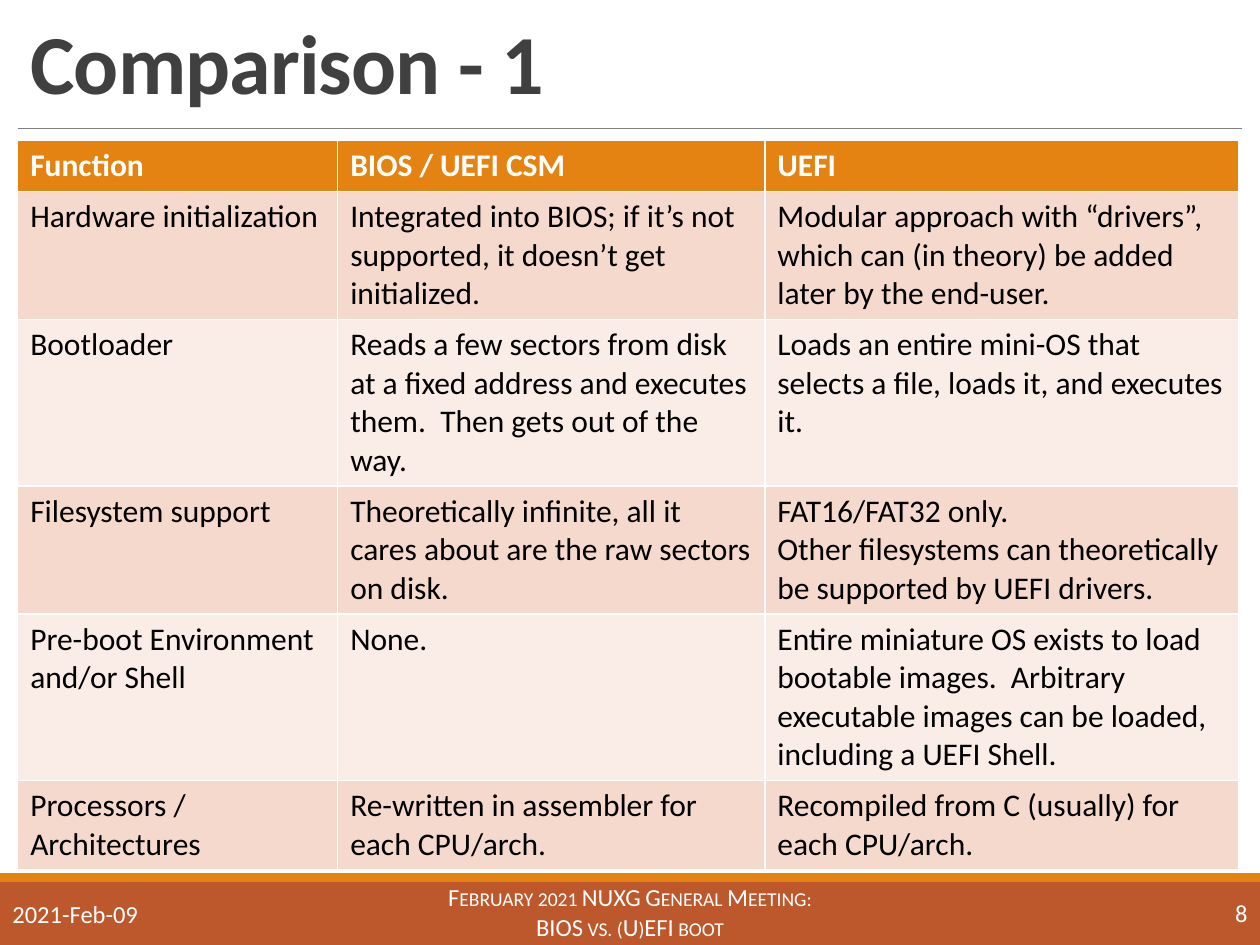
import pptx
import pptx.util
import pptx.dml.color
import pptx.enum.shapes
import pptx.enum.text
import lxml.etree
from pptx.util import Inches

ALIGN = pptx.enum.text.PP_ALIGN
ANCHOR = pptx.enum.text.MSO_ANCHOR


def color(hex_string):
    return pptx.dml.color.RGBColor.from_string(hex_string)


def format_text(paragraph, size, hex_string, bold=False, align=ALIGN.LEFT):
    paragraph.alignment = align
    paragraph.font.name = "Calibri"
    paragraph.font.size = pptx.util.Pt(size)
    paragraph.font.bold = bold
    paragraph.font.color.rgb = color(hex_string)


presentation = pptx.Presentation()
presentation.slide_width = Inches(10)
presentation.slide_height = Inches(7.5)
slide = presentation.slides.add_slide(presentation.slide_layouts[5])

# Footer bands
for top, height, fill in [(7, 0.5, "BD582C"), (6.93, 0.07, "E48312")]:
    band = slide.shapes.add_shape(
        pptx.enum.shapes.MSO_SHAPE.RECTANGLE,
        Inches(0), Inches(top), Inches(10), Inches(height))
    band.shadow.inherit = False
    band.fill.solid()
    band.fill.fore_color.rgb = color(fill)
    band.line.fill.background()

# Rule under the title
rule = slide.shapes.add_connector(
    pptx.enum.shapes.MSO_CONNECTOR.STRAIGHT,
    Inches(0.14), Inches(1.02), Inches(9.86), Inches(1.02))
rule.line.color.rgb = color("808080")
rule.line.width = pptx.util.Pt(0.5)
lxml.etree.SubElement(rule._element.spPr, pptx.oxml.ns.qn("a:effectLst"))

# Title
title = slide.shapes.title
title.left, title.top = Inches(0.14), Inches(0)
title.width, title.height = Inches(9.7), Inches(0.94)
title.text_frame.text = "Comparison - 1"
title.text_frame.auto_size = pptx.enum.text.MSO_AUTO_SIZE.NONE
title.text_frame.vertical_anchor = ANCHOR.BOTTOM
heading = title.text_frame.paragraphs[0]
heading.line_spacing = 0.85
format_text(heading, 48, "404040", bold=True)
heading.font._rPr.set("spc", "-50")

# Comparison table
rows = [
    ("Function", "BIOS / UEFI CSM", "UEFI"),
    ("Hardware initialization",
     "Integrated into BIOS; if it’s not supported, it doesn’t get initialized.",
     "Modular approach with “drivers”, which can (in theory) be added later by the end-user."),
    ("Bootloader",
     "Reads a few sectors from disk at a fixed address and executes them.  Then gets out of the way.",
     "Loads an entire mini-OS that selects a file, loads it, and executes it."),
    ("Filesystem support",
     "Theoretically infinite, all it cares about are the raw sectors on disk.",
     "FAT16/FAT32 only.\nOther filesystems can theoretically be supported by UEFI drivers."),
    ("Pre-boot Environment and/or Shell",
     "None.",
     "Entire miniature OS exists to load bootable images.  Arbitrary executable images "
     "can be loaded, including a UEFI Shell."),
    ("Processors / Architectures",
     "Re-written in assembler for each CPU/arch.",
     "Recompiled from C (usually) for each CPU/arch."),
]
table = slide.shapes.add_table(
    len(rows), 3, Inches(0.14), Inches(1.11), Inches(9.69), Inches(0.41 * len(rows))).table
for column, width in zip(table.columns, (2.54, 3.39, 3.76)):
    column.width = Inches(width)
for row_index, row in enumerate(rows):
    header = row_index == 0
    fill = "E48312" if header else ("FAEDE7", "F5D9CC")[row_index % 2]
    for column_index, text in enumerate(row):
        cell = table.cell(row_index, column_index)
        cell.text = text
        cell.fill.solid()
        cell.fill.fore_color.rgb = color(fill)
        for paragraph in cell.text_frame.paragraphs:
            format_text(paragraph, 18, "FFFFFF" if header else "000000", bold=header)

# Date, meeting name and slide number
footers = [
    ("2021-Feb-09", 0, 7.05, 2.03, 0.4, ALIGN.LEFT, "none"),
    ("February 2021 NUXG General Meeting:\vBIOS vs. (U)EFI boot",
     3.02, 7, 3.96, 0.47, ALIGN.CENTER, "small"),
    ("8", 8.92, 7.04, 1.08, 0.4, ALIGN.RIGHT, "none"),
]
for text, left, top, width, height, align, caps in footers:
    footer = slide.shapes.add_textbox(
        Inches(left), Inches(top), Inches(width), Inches(height))
    footer.text_frame.word_wrap = True
    footer.text_frame.vertical_anchor = ANCHOR.MIDDLE
    paragraph = footer.text_frame.paragraphs[0]
    paragraph.text = text
    format_text(paragraph, 14, "FFFFFF", align=align)
    paragraph.font._rPr.set("cap", caps)

presentation.save("out.pptx")
